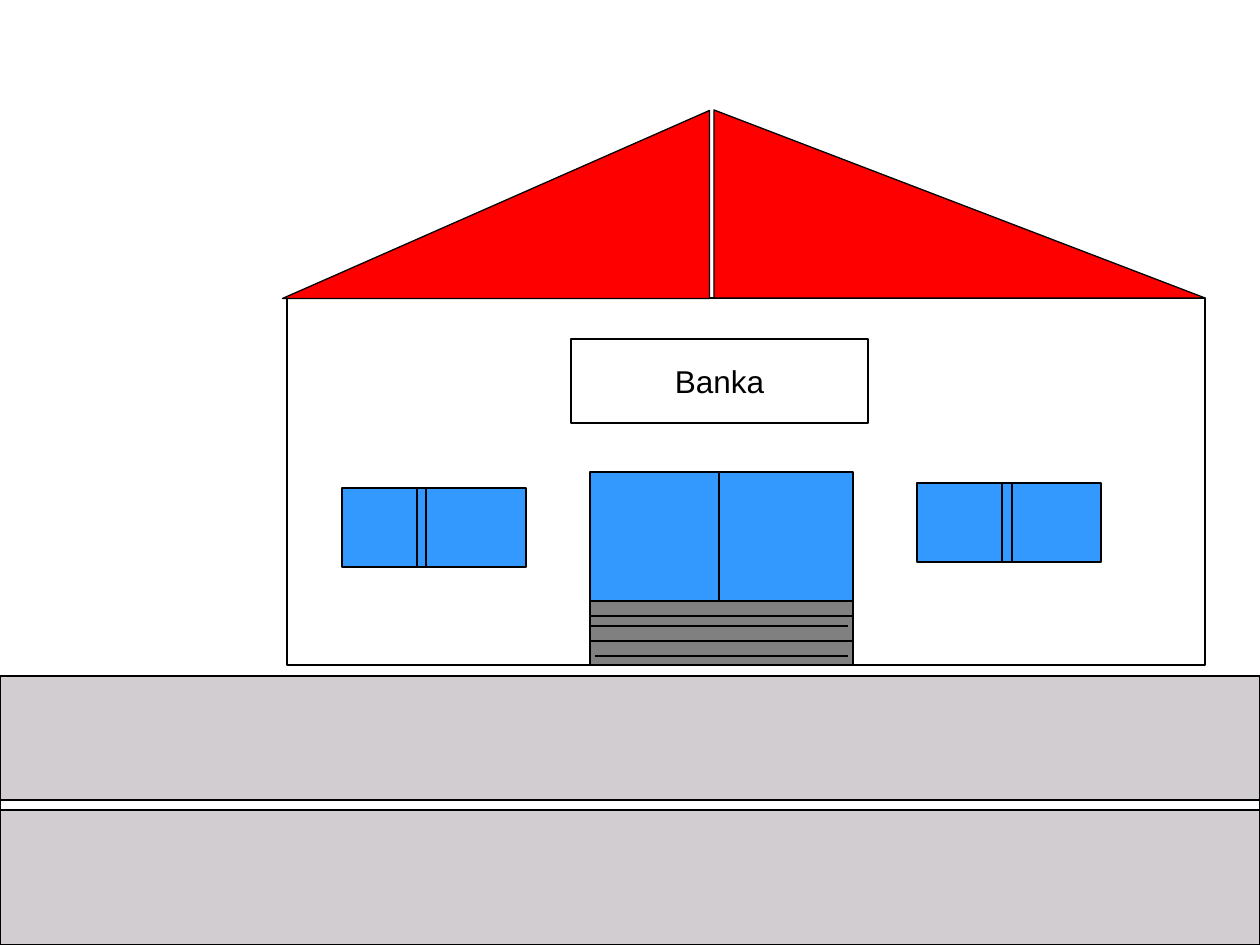
from lxml.etree import SubElement
from pptx import Presentation
from pptx.dml.color import RGBColor
from pptx.enum.shapes import MSO_CONNECTOR, MSO_SHAPE as SHAPE
from pptx.enum.text import MSO_ANCHOR, PP_ALIGN
from pptx.oxml.ns import qn
from pptx.util import Emu, Pt

PX = 914400 // 126
SLIDE_WIDTH, SLIDE_HEIGHT = 1260, 945
BLACK, WHITE, RED = "000000", "FFFFFF", "FF0000"
ROAD_GREY, STEP_GREY, GLASS_BLUE = "D1CDD1", "808080", "3399FF"

# Boxes are left, top, width, height in px.
ROAD = [
    ((0, 676, 1260, 269), ROAD_GREY),
    ((0, 800, 1260, 10), WHITE),
]
WALL = (287, 298, 918, 367)
ROOF_RIGHT = (714, 110, 491, 188)
ROOF_LEFT = (402, -9, 188, 427)  # before its quarter turn
STEPS = (590, 601, 263, 64)
STEP_EDGES = [(595, 848, 656), (590, 853, 641), (590, 853, 616), (590, 848, 626)]
DOOR = (590, 472, 263, 129)
DOOR_SPLIT = 719
WINDOW_SIZE = (184, 79)
WINDOWS = [  # left, top, positions of the two bars
    (342, 488, (417, 426)),
    (917, 483, (1002, 1012)),
]
SIGN = (571, 339, 297, 84)
SIGN_TEXT = "Banka"
SIGN_FONT = {"name": "Arial", "size": Pt(18)}


def px(*values):
    return [Emu(value * PX) for value in values]


def color(hex_text):
    return RGBColor.from_string(hex_text)


def outline(item):
    item.line.color.rgb = color(BLACK)
    item.line.width = Pt(0.75)


def add_block(shapes, box, fill, kind=SHAPE.RECTANGLE):
    block = shapes.add_shape(kind, *px(*box))
    block.shadow.inherit = False
    block.fill.solid()
    block.fill.fore_color.rgb = color(fill)
    outline(block)
    return block


def add_line(shapes, *ends):
    line = shapes.add_connector(MSO_CONNECTOR.STRAIGHT, *px(*ends))
    outline(line)
    SubElement(line._element.spPr, qn("a:effectLst"))


def add_sign(shapes):
    sign = add_block(shapes, SIGN, WHITE)
    frame = sign.text_frame
    frame.word_wrap = False
    frame.vertical_anchor = MSO_ANCHOR.MIDDLE
    para = frame.paragraphs[0]
    para.alignment = PP_ALIGN.CENTER
    span = para.add_run()
    span.text = SIGN_TEXT
    for name, value in SIGN_FONT.items():
        setattr(span.font, name, value)
    span.font.color.rgb = color(BLACK)


def add_bank(shapes):
    add_block(shapes, WALL, WHITE)
    add_block(shapes, ROOF_RIGHT, RED, SHAPE.RIGHT_TRIANGLE)
    add_block(shapes, ROOF_LEFT, RED, SHAPE.RIGHT_TRIANGLE).rotation = 270

    add_block(shapes, STEPS, STEP_GREY)
    for left, right, y in STEP_EDGES:
        add_line(shapes, left, y, right, y)

    add_block(shapes, DOOR, GLASS_BLUE)
    add_line(shapes, DOOR_SPLIT, DOOR[1], DOOR_SPLIT, DOOR[1] + DOOR[3])

    for left, top, bars in WINDOWS:
        add_block(shapes, (left, top, *WINDOW_SIZE), GLASS_BLUE)
        for x in bars:
            add_line(shapes, x, top, x, top + WINDOW_SIZE[1])

    add_sign(shapes)


def main():
    deck = Presentation()
    deck.slide_width, deck.slide_height = px(SLIDE_WIDTH, SLIDE_HEIGHT)
    page = deck.slides.add_slide(deck.slide_layouts[6])
    for box, fill in ROAD:
        add_block(page.shapes, box, fill)
    add_bank(page.shapes.add_group_shape().shapes)
    deck.save("out.pptx")


if __name__ == "__main__":
    main()
